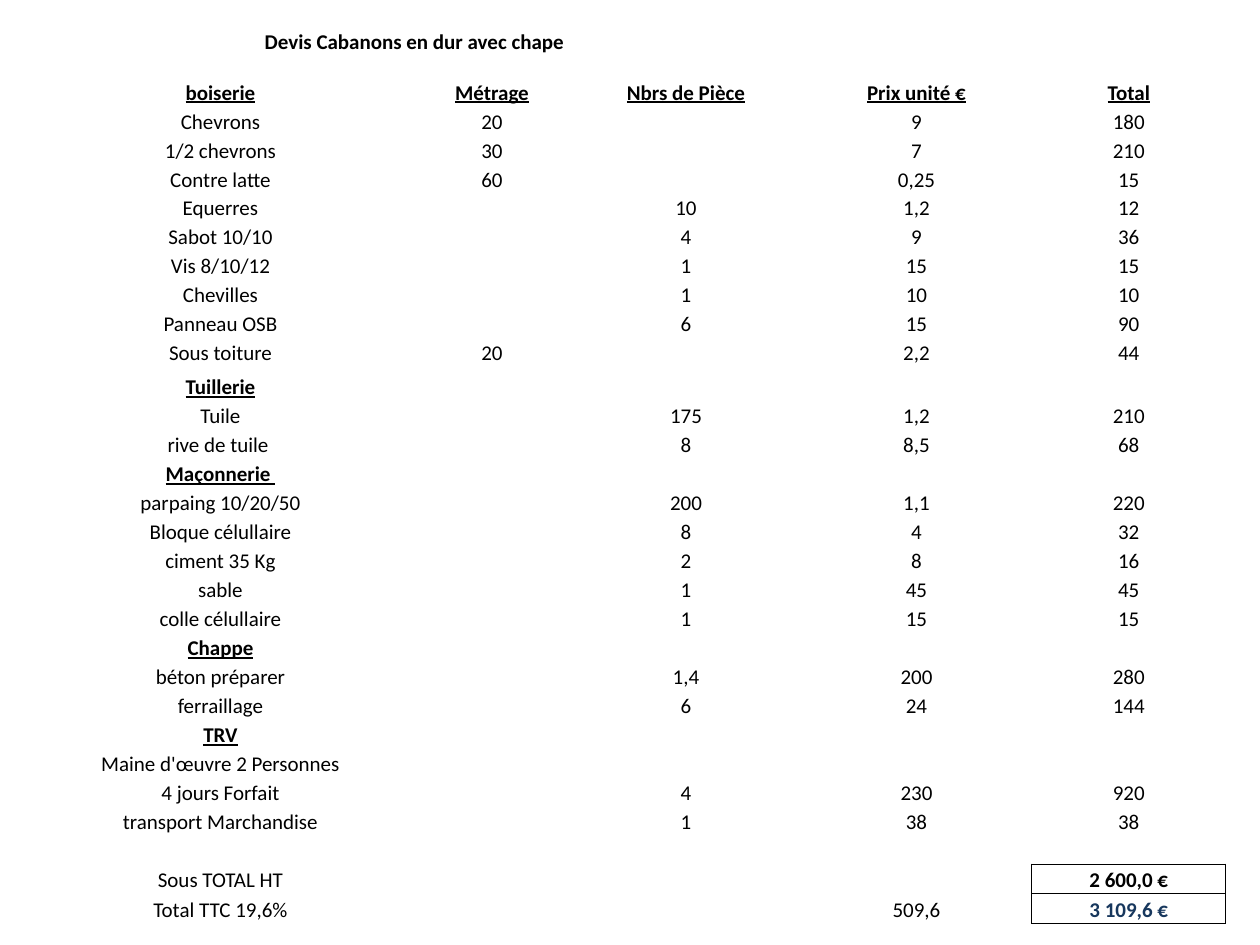
from lxml.etree import SubElement
from pptx import Presentation
from pptx.dml.color import RGBColor
from pptx.enum.text import MSO_ANCHOR as Anchor, PP_ALIGN as Align
from pptx.oxml import parse_xml
from pptx.oxml.ns import nsdecls, qn
from pptx.util import Inches, Pt

BLACK = RGBColor(0x00, 0x00, 0x00)
NAVY = RGBColor(0x17, 0x37, 0x5D)

PLAIN = {"bold": False, "underline": False}
BOLD = {"bold": True}
HEADING = {"bold": True, "underline": True}
NO_STYLE_NO_GRID = "{2D5ABB26-0587-4C30-8999-92F81FD0307C}"

# Sizes in grid units: the slide is 1000 units wide and 750 high
COLUMN_WIDTHS = [294, 137, 171, 29, 137, 23, 154]
ROW_HEIGHT, GAP_HEIGHT, TILES_HEIGHT, LAST_HEIGHT = 23, 17, 27, 24
LABEL, LENGTH, PIECES, PRICE, TOTAL = 0, 1, 2, 4, 6
FIELDS = (LABEL, LENGTH, PIECES, PRICE, TOTAL)

TITLE = "Devis Cabanons en dur avec chape"
SECTIONS = [
    (("boiserie", "Métrage", "Nbrs de Pièce", "Prix unité €", "Total"), [
        ("Chevrons", "20", "", "9", "180"),
        ("1/2 chevrons", "30", "", "7", "210"),
        ("Contre latte", "60", "", "0,25", "15"),
        ("Equerres", "", "10", "1,2", "12"),
        ("Sabot 10/10", "", "4", "9", "36"),
        ("Vis 8/10/12", "", "1", "15", "15"),
        ("Chevilles", "", "1", "10", "10"),
        ("Panneau OSB", "", "6", "15", "90"),
        ("Sous toiture", "20", "", "2,2", "44"),
    ]),
    (("Tuillerie",), [
        ("Tuile", "", "175", "1,2", "210"),
        ("rive de tuile ", "", "8", "8,5", "68"),
    ]),
    (("Maçonnerie ",), [
        ("parpaing 10/20/50", "", "200", "1,1", "220"),
        ("Bloque célullaire", "", "8", "4", "32"),
        ("ciment 35 Kg", "", "2", "8", "16"),
        ("sable", "", "1", "45", "45"),
        ("colle célullaire", "", "1", "15", "15"),
    ]),
    (("Chappe",), [
        ("béton préparer", "", "1,4", "200", "280"),
        ("ferraillage", "", "6", "24", "144"),
    ]),
    (("TRV",), [
        ("Maine d'œuvre 2 Personnes",),
        ("4 jours Forfait", "", "4", "230", "920"),
        ("transport Marchandise", "", "1", "38", "38"),
    ]),
]
SUMMARY = [
    ("Sous TOTAL HT", "", "", "", "2 600,0 €"),
    ("Total TTC 19,6%", "", "", "509,6", "3 109,6 €"),
]


class QuoteSlide:
    """Holds the text style and the slide, measured in grid units."""

    font_name = "Calibri"
    font_size = Pt(12)
    empty_size = 8

    def __init__(self, presentation):
        self.unit = presentation.slide_width / 1000
        self.slide = presentation.slides.add_slide(presentation.slide_layouts[6])

    def length(self, units):
        return round(units * self.unit)

    def table(self, left, top, widths, heights):
        box = [self.length(value) for value in (left, top, sum(widths), sum(heights))]
        frame = self.slide.shapes.add_table(len(heights), len(widths), *box)
        table = frame.table
        table.first_row = table.horz_banding = False
        table._tbl.tblPr.find(qn("a:tableStyleId")).text = NO_STYLE_NO_GRID
        for column, width in zip(table.columns, widths):
            column.width = self.length(width)
        for row, height in zip(table.rows, heights):
            row.height = self.length(height)
        for cell in table.iter_cells():
            self.clear(cell)
        return table

    def clear(self, cell):
        """Remove fill and margins, and keep empty text smaller than its row."""
        cell.fill.background()
        for side in ("left", "right", "top", "bottom"):
            setattr(cell, f"margin_{side}", 0)
        cell.vertical_anchor = Anchor.BOTTOM
        end = SubElement(cell.text_frame.paragraphs[0]._p, qn("a:endParaRPr"))
        end.set("sz", str(self.empty_size * 100))

    def text(self, cell, text, style, color=BLACK):
        paragraph = cell.text_frame.paragraphs[0]
        paragraph.alignment = Align.CENTER
        run = paragraph.add_run()
        run.text = text
        values = {"name": self.font_name, "size": self.font_size, **style}
        for name, value in values.items():
            setattr(run.font, name, value)
        run.font.color.rgb = color

    def record(self, table, row, texts, style):
        for column, text in zip(FIELDS, texts):
            if text:
                self.text(table.cell(row, column), text, style)

    def border(self, cell, sides):
        """Draw thin lines on the sides given as letters in L, R, T, B order."""
        for index, side in enumerate(sides):
            line = parse_xml(
                f'<a:ln{side} {nsdecls("a")} w="{Pt(0.5)}"><a:solidFill>'
                f'<a:srgbClr val="{BLACK}"/></a:solidFill></a:ln{side}>')
            cell._tc.get_or_add_tcPr().insert(index, line)


def main():
    presentation = Presentation()
    presentation.slide_width, presentation.slide_height = Inches(10), Inches(7.5)
    quote = QuoteSlide(presentation)

    records = []
    for heading, items in SECTIONS:
        records.append((heading, HEADING))
        records += [(item, PLAIN) for item in items]
    first_record = 2
    summary_row = first_record + len(records) + 1
    tiles_row = first_record + 1 + len(SECTIONS[0][1])

    heights = [ROW_HEIGHT] * (summary_row + len(SUMMARY))
    heights[1], heights[tiles_row], heights[-1] = GAP_HEIGHT, TILES_HEIGHT, LAST_HEIGHT
    table = quote.table(28, 21, COLUMN_WIDTHS, heights)

    title = table.cell(0, LABEL)
    title.merge(table.cell(0, PIECES))
    quote.text(title, TITLE, BOLD)
    for row, (texts, style) in enumerate(records, first_record):
        quote.record(table, row, texts, style)

    quote.border(table.cell(summary_row - 1, TOTAL), "B")
    for row, (texts, color) in enumerate(zip(SUMMARY, (BLACK, NAVY)), summary_row):
        quote.record(table, row, texts[:-1], PLAIN)
        quote.text(table.cell(row, TOTAL), texts[-1], BOLD, color)
        quote.border(table.cell(row, TOTAL - 1), "R")
        quote.border(table.cell(row, TOTAL), "LRTB")

    presentation.save("out.pptx")


if __name__ == "__main__":
    main()
